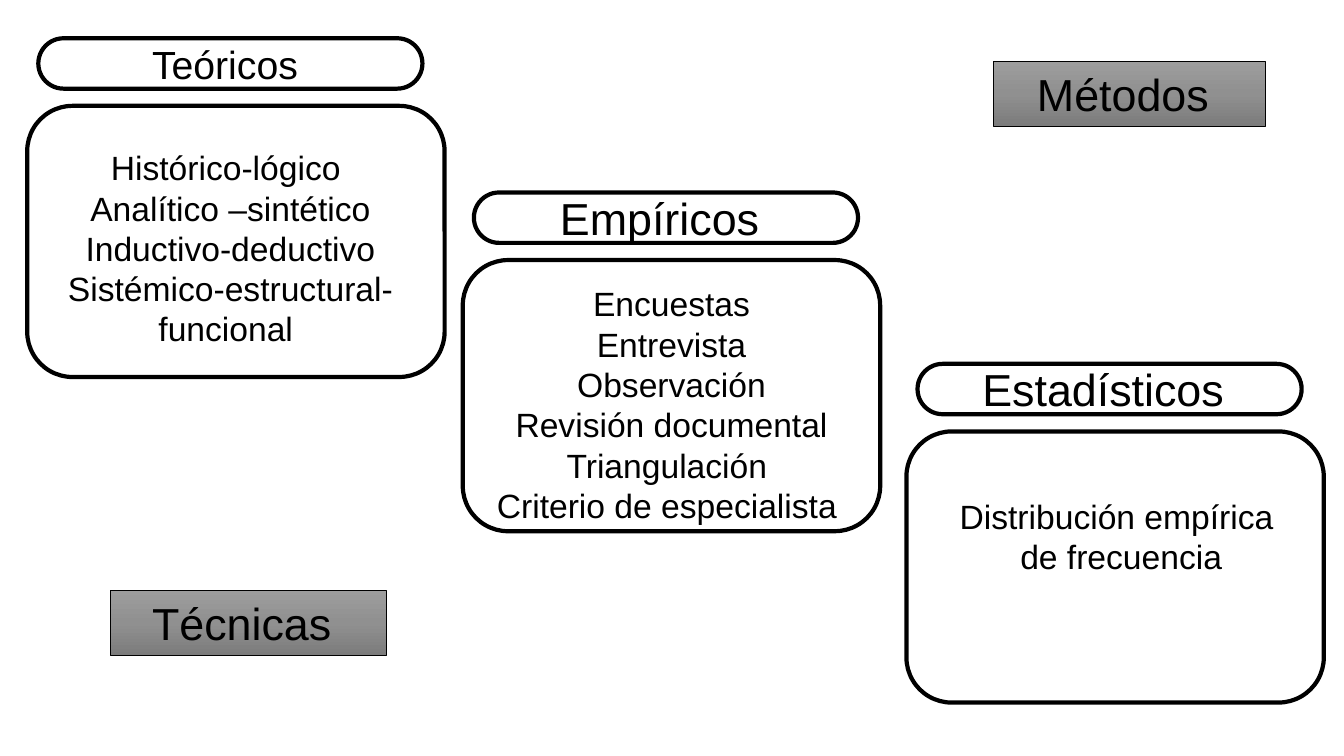
from copy import deepcopy
from dataclasses import dataclass

from pptx import Presentation
from pptx.dml.color import RGBColor as RGB
from pptx.enum.shapes import MSO_SHAPE as SHAPE
from pptx.enum.text import MSO_ANCHOR as ANCHOR, MSO_AUTO_SIZE as AUTO, PP_ALIGN as ALIGN
from pptx.oxml.ns import qn
from pptx.util import Pt

PX = 9144


@dataclass(frozen=True)
class Theme:
    font: str = "Arial"
    ink: RGB = RGB.from_string("000000")
    paper: RGB = RGB.from_string("FFFFFF")
    shades: tuple = ((0, "9D9D9D"), (0.5, "909090"), (1, "7C7C7C"))
    body: int = 24
    small_title: int = 28
    title: int = 32
    outline: float = 3
    hairline: float = 0.5


class Deck:
    """Draws the elements of the methods slide in one theme."""

    def __init__(self, theme, width, height):
        self.theme = theme
        self.prs = Presentation()
        self.prs.slide_width, self.prs.slide_height = width * PX, height * PX
        self.slide = self.prs.slides.add_slide(self.prs.slide_layouts[6])

    def text(self, sp, lines, size, **frame):
        tf = sp.text_frame
        for name, value in frame.items():
            setattr(tf, name, value)
        font = {"name": self.theme.font, "size": Pt(size)}
        for i, line in enumerate(lines):
            p = tf.paragraphs[0] if i == 0 else tf.add_paragraph()
            p.alignment = ALIGN.CENTER
            r = p.add_run()
            r.text = line
            for name, value in font.items():
                setattr(r.font, name, value)
            r.font.color.rgb = self.theme.ink

    def shape(self, shapes, kind, box, weight):
        sp = shapes.add_shape(kind, *(v * PX for v in box))
        sp.shadow.inherit = False
        sp.line.color.rgb = self.theme.ink
        sp.line.width = Pt(weight)
        return sp

    def panel(self, x, y, title, size, lines, text_box, wrap):
        shapes = self.slide.shapes.add_group_shape().shapes
        weight = self.theme.outline
        frame = self.shape(shapes, SHAPE.ROUNDED_RECTANGLE, (x, y, 414, 269), weight)
        frame.adjustments[0] = 0.167
        frame.fill.background()
        head = self.shape(shapes, SHAPE.ROUNDED_RECTANGLE, (x + 11, y - 67, 381, 50), weight)
        head.adjustments[0] = 0.5
        head.fill.solid()
        head.fill.fore_color.rgb = self.theme.paper
        self.text(head, [title], size, word_wrap=False, vertical_anchor=ANCHOR.MIDDLE)
        body = shapes.add_textbox(*(v * PX for v in text_box))
        self.text(body, lines, self.theme.body, word_wrap=wrap,
                  auto_size=AUTO.SHAPE_TO_FIT_TEXT)

    def label(self, box, text):
        sp = self.shape(self.slide.shapes, SHAPE.RECTANGLE, box, self.theme.hairline)
        sp.fill.gradient()
        sp.fill.gradient_angle = 270
        stops = sp._element.spPr.find(qn("a:gradFill")).find(qn("a:gsLst"))
        stops.append(deepcopy(stops[-1]))
        for stop, (position, shade) in zip(sp.fill.gradient_stops, self.theme.shades):
            stop.position = position
            stop.color.rgb = RGB.from_string(shade)
        self.text(sp, [text], self.theme.title, word_wrap=True,
                  vertical_anchor=ANCHOR.TOP, auto_size=AUTO.SHAPE_TO_FIT_TEXT)


def main():
    theme = Theme()
    deck = Deck(theme, 1333, 750)
    panels = [
        (27, 105, "Teóricos ", theme.small_title,
         ["Histórico-lógico ", "Analítico –sintético", "Inductivo-deductivo",
          "Sistémico-estructural- funcional "], (21, 141, 415, 212), True),
        (899, 428, "Estadísticos ", theme.title,
         ["Distribución empírica ", "de frecuencia"], (940, 487, 344, 91), False),
        (459, 258, "Empíricos ", theme.title,
         ["Encuestas", "Entrevista", "Observación", "Revisión documental",
          "Triangulación ", "Criterio de especialista "], (444, 276, 444, 252), True),
    ]
    for panel in panels:
        deck.panel(*panel)
    deck.label((985, 61, 270, 64), "Métodos ")
    deck.label((109, 586, 274, 64), "Técnicas ")
    deck.prs.save("out.pptx")


if __name__ == "__main__":
    main()
